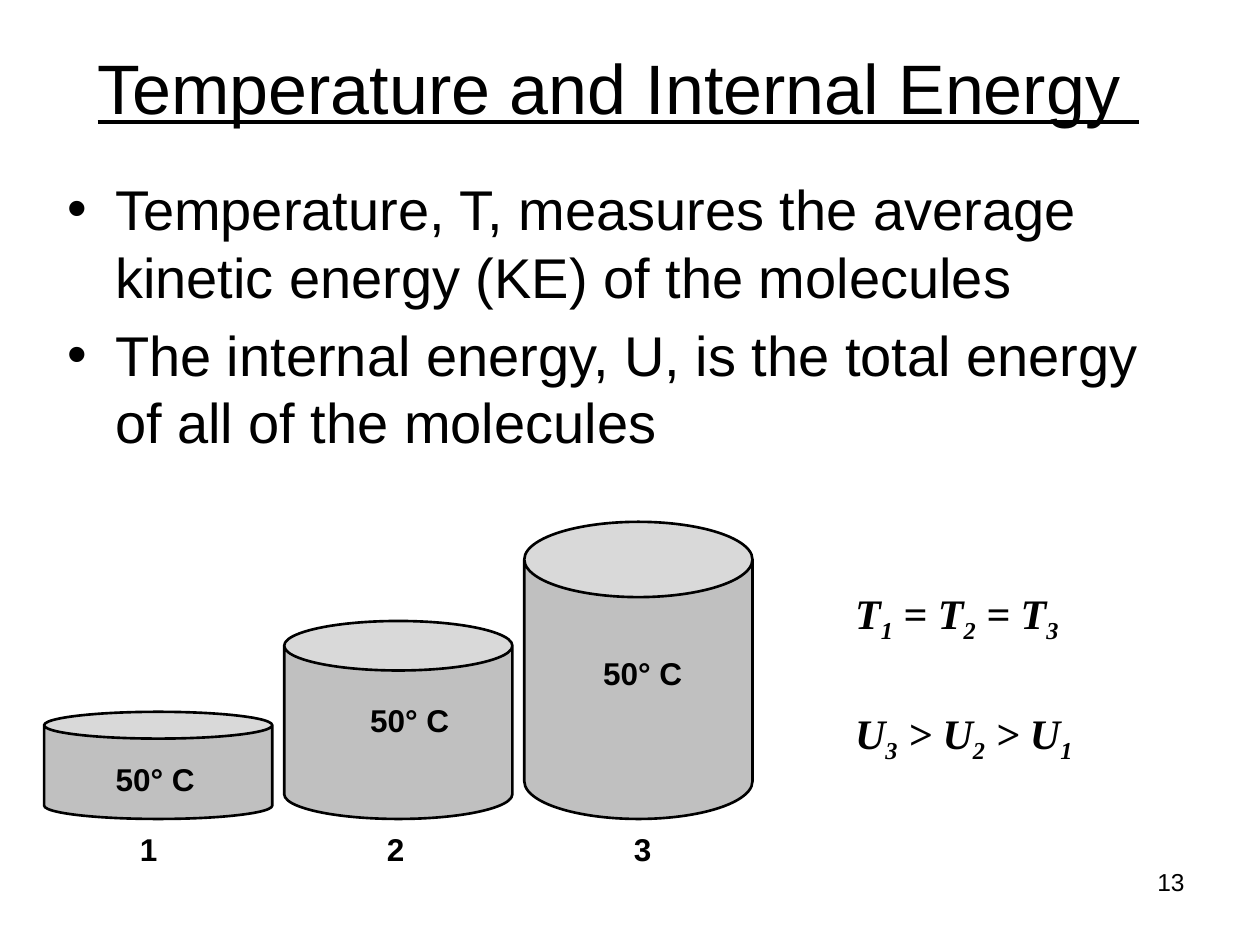
from dataclasses import dataclass

from lxml import etree
from pptx import Presentation
from pptx.dml.color import RGBColor
from pptx.enum.shapes import MSO_SHAPE
from pptx.enum.text import MSO_ANCHOR, PP_ALIGN
from pptx.oxml.ns import qn
from pptx.util import Cm, Pt

CAN = MSO_SHAPE.CAN
MIDDLE = MSO_ANCHOR.MIDDLE
LEFT, CENTER, RIGHT = PP_ALIGN.LEFT, PP_ALIGN.CENTER, PP_ALIGN.RIGHT

COLORS = {"ink": "000000", "can": "C0C0C0"}
SANS, SERIF = "Arial", "Times New Roman"

CAN_LEFT, CAN_PITCH, CAN_WIDTH, CAN_BOTTOM = 0.89, 4.84, 4.6, 16.51
NUMBER_LEFT, NUMBER_PITCH, NUMBER_TOP = 2.57, 4.98, 16.61


@dataclass
class Cylinder:
    height: float
    rim: float
    label_left: float
    label_top: float


CYLINDERS = [
    Cylinder(2.16, 0.25, 2.08, 15.19),
    Cylinder(3.99, 0.25, 7.21, 14.0),
    Cylinder(5.99, 0.33, 11.91, 13.06),
]
BULLETS = [
    "Temperature, T, measures the average kinetic energy (KE) of the molecules",
    "The internal energy, U, is the total energy of all of the molecules",
]
# Each relation alternates normal text with its subscript.
RELATIONS = [
    [("T", "1"), (" = T", "2"), (" = T", "3")],
    [("U", "3"), (" > U", "2"), (" > U", "1")],
]


def color(name: str) -> RGBColor:
    return RGBColor.from_string(COLORS[name])


def style(para, size: float, face: str = SANS, bold: bool = False) -> None:
    font = para.font
    font.size, font.name, font.bold = Pt(size), face, bold
    font.color.rgb = color("ink")


def add_box(page, left: float, top: float, width: float, height: float, wrap: bool = True):
    box = page.shapes.add_textbox(Cm(left), Cm(top), Cm(width), Cm(height))
    box.text_frame.word_wrap = wrap
    return box.text_frame


def add_line(frame, text: str, size: float, bold: bool = False, align=LEFT):
    para = frame.paragraphs[0]
    para.text, para.alignment = text, align
    style(para, size, bold=bold)
    return para


def paragraphs(frame, count: int):
    return [frame.paragraphs[0]] + [frame.add_paragraph() for _ in range(count - 1)]


def add_bullets(page) -> None:
    frame = add_box(page, 1.12, 3.4, 22.86, 6.43)
    for para, text in zip(paragraphs(frame, len(BULLETS)), BULLETS):
        para.text = text
        style(para, 32)
        props = para._p.get_or_add_pPr()
        props.set("marL", str(Cm(0.95)))
        props.set("indent", str(Cm(-0.95)))
        # Spacing precedes the bullet in the schema's child order.
        before = etree.SubElement(props, qn("a:spcBef"))
        etree.SubElement(before, qn("a:spcPct")).set("val", "20000")
        etree.SubElement(props, qn("a:buFont")).set("typeface", SANS)
        etree.SubElement(props, qn("a:buChar")).set("char", "•")
        # Default run properties stay last but for extensions.
        props.append(props.find(qn("a:defRPr")))


def add_cylinder(page, index: int, cylinder: Cylinder) -> None:
    can = page.shapes.add_shape(
        CAN, Cm(CAN_LEFT + index * CAN_PITCH), Cm(CAN_BOTTOM - cylinder.height),
        Cm(CAN_WIDTH), Cm(cylinder.height))
    can.adjustments[0] = cylinder.rim
    can.shadow.inherit = False
    can.fill.solid()
    can.fill.fore_color.rgb = color("can")
    can.line.color.rgb = color("ink")
    can.line.width = Pt(1.5)

    label = add_box(page, cylinder.label_left, cylinder.label_top, 2.11, 1.02, wrap=False)
    add_line(label, "50° C", 18, bold=True)
    number = add_box(page, NUMBER_LEFT + index * NUMBER_PITCH, NUMBER_TOP, 0.86, 1.02, wrap=False)
    add_line(number, str(index + 1), 18, bold=True)


def add_relations(page) -> None:
    frame = add_box(page, 16.99, 11.71, 6.38, 2.97)
    lines = paragraphs(frame, len(RELATIONS))
    for para, terms in zip(lines, RELATIONS):
        style(para, 24, SERIF, bold=True)
        para.font.italic = True
        for symbol, subscript in terms:
            para.add_run().text = symbol
            span = para.add_run()
            span.text = subscript
            span.font._element.set("baseline", "-25000")
    lines[1].space_before = Pt(36)


def main() -> None:
    deck = Presentation()
    deck.slide_width, deck.slide_height = Cm(25.4), Cm(19.05)
    page = deck.slides.add_slide(deck.slide_layouts[6])

    title = add_box(page, 1.04, 0.36, 22.86, 2.77)
    title.vertical_anchor = MIDDLE
    add_line(title, "Temperature and Internal Energy ", 40, align=CENTER).font.underline = True

    add_bullets(page)
    for index, cylinder in enumerate(CYLINDERS):
        add_cylinder(page, index, cylinder)
    add_relations(page)
    add_line(add_box(page, 18.21, 17.35, 5.92, 1.32), "13", 14, align=RIGHT)

    deck.save("out.pptx")


if __name__ == "__main__":
    main()
